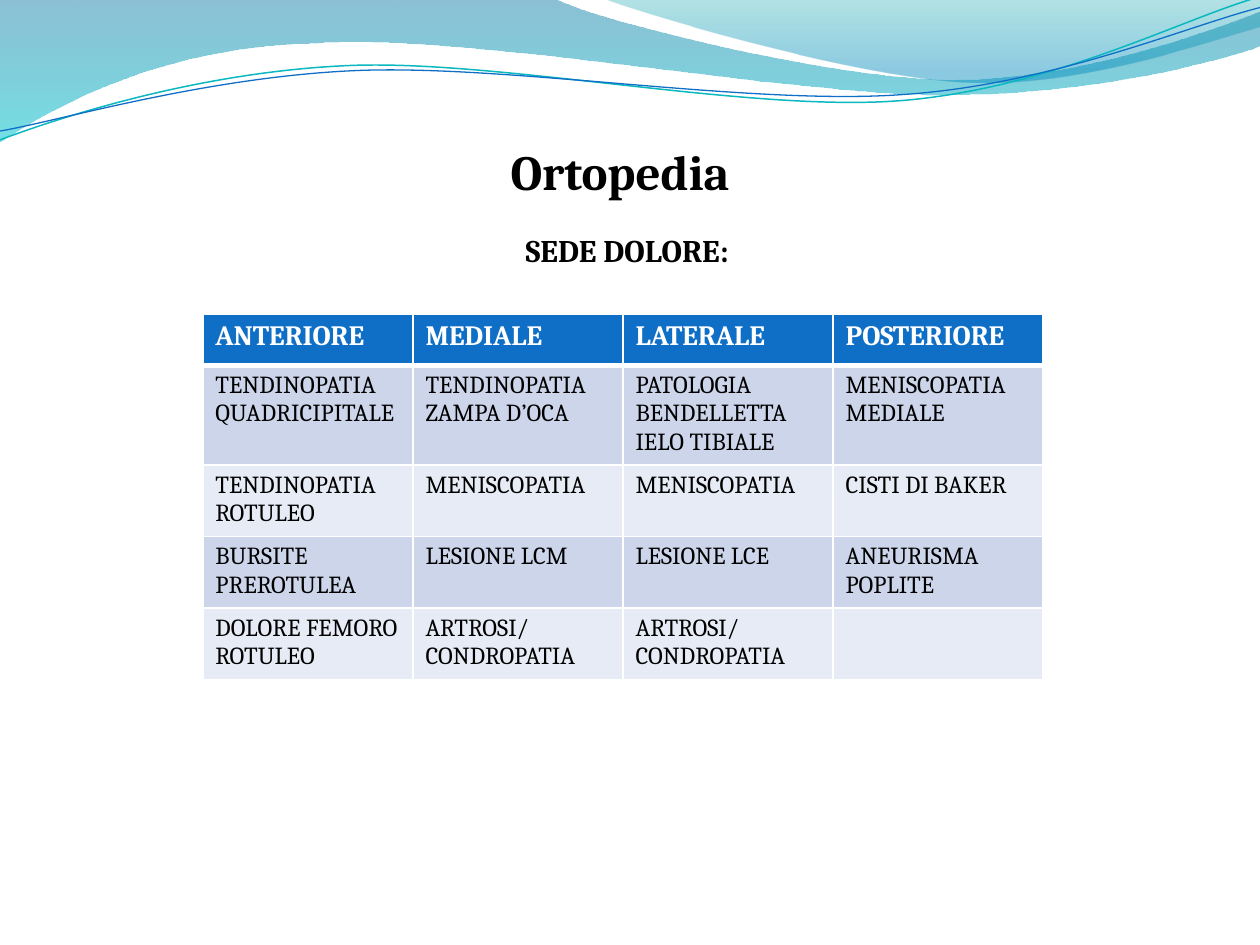
from math import cos, radians, sin

from lxml import etree
from pptx import Presentation
from pptx.dml.color import RGBColor
from pptx.enum.text import MSO_ANCHOR, MSO_AUTO_SIZE, PP_ALIGN
from pptx.oxml.ns import qn
from pptx.util import Inches, Pt

CENTER = PP_ALIGN.CENTER
TOP = MSO_ANCHOR.TOP
NO_AUTOFIT = MSO_AUTO_SIZE.NONE

COLORS = {
    "text": "000000", "white": "FFFFFF", "header": "0F6FC6",
    "odd": "CCD5EA", "even": "E7EBF5", "teal": "0AB8BF",
    "wave_top": "0074A1", "wave_bottom": "00C6CF",
    "crest_top": "00A1A9", "crest_bottom": "008BBF",
}
LINE_TILT = -2.7
LINE_PIVOT = (4.99, 0.58)

# Outlines in inches: a pair is a corner, a six-tuple is a Bézier curve
WAVE = [(0, 0), (4.4, -0.01), (4.76, 0.17, 6.64, 0.63, 7.58, 0.63),
        (8.53, 0.63, 9.58, 0.26, 10, 0.09), (10.01, 0.36),
        (9.83, 0.44, 8.7, 0.76, 7.46, 0.75), (6.22, 0.75, 3.82, 0.28, 2.57, 0.34),
        (1.29, 0.36, 0.46, 0.83, -0.01, 1.13), (0, 0)]
CREST = [(4.79, -0.01), (5.09, 0.11, 6.82, 0.62, 7.69, 0.65),
         (8.56, 0.69, 9.61, 0.32, 10, 0.21), (10, 0), (4.79, -0.01)]
TEAL_LINE = [(0, 1.11), (0.48, 0.93, 1.58, 0.57, 2.77, 0.52),
             (3.95, 0.47, 5.93, 0.89, 7.13, 0.8), (8.33, 0.71, 9.38, 0.15, 9.98, -0.02)]
BLUE_LINE = [(0, 1.04), (0.47, 0.96, 1.64, 0.61, 2.83, 0.56),
             (4.03, 0.51, 5.97, 0.84, 7.17, 0.75), (8.36, 0.67, 9.41, 0.21, 10, 0.06)]

PAIN_SITES = [
    ["ANTERIORE", "MEDIALE", "LATERALE", "POSTERIORE"],
    ["TENDINOPATIA QUADRICIPITALE", "TENDINOPATIA ZAMPA D’OCA",
     "PATOLOGIA BENDELLETTA IELO TIBIALE", "MENISCOPATIA MEDIALE"],
    ["TENDINOPATIA ROTULEO", "MENISCOPATIA", "MENISCOPATIA", "CISTI DI BAKER"],
    ["BURSITE PREROTULEA", "LESIONE LCM", "LESIONE LCE", "ANEURISMA POPLITE"],
    ["DOLORE FEMORO ROTULEO", "ARTROSI/CONDROPATIA", "ARTROSI/CONDROPATIA", ""],
]


def color(name):
    return RGBColor.from_string(COLORS[name])


def turn(outline, degrees):
    """Rotate an outline clockwise about the pivot of the thin lines."""
    c, s = cos(radians(degrees)), sin(radians(degrees))
    px, py = LINE_PIVOT
    turned = []
    for segment in outline:
        values = []
        for x, y in zip(segment[::2], segment[1::2]):
            values += [px + (x - px) * c - (y - py) * s, py + (x - px) * s + (y - py) * c]
        turned.append(tuple(values))
    return turned


class SlideBuilder:
    font = "Cambria"

    def __init__(self, slide):
        self.slide = slide

    def add_run(self, paragraph, text, size, color_name, bold):
        run = paragraph.add_run()
        run.text = text
        run.font.name = self.font
        run.font.size = Pt(size)
        run.font.bold = bold
        run.font.color.rgb = color(color_name)

    def freeform(self, outline, close):
        points = [(Inches(x), Inches(y)) for segment in outline
                  for x, y in zip(segment[::2], segment[1::2])]
        builder = self.slide.shapes.build_freeform(*points[0])
        builder.add_line_segments(points[1:], close=close)
        shape = builder.convert_to_shape()
        shape.shadow.inherit = False
        # Merge the three steps of each curve into one Bézier segment
        steps = iter(list(shape._element.spPr.iter(qn("a:lnTo"))))
        for segment in outline[1:]:
            first = next(steps)
            if len(segment) == 6:
                first.tag = qn("a:cubicBezTo")
                for _ in range(2):
                    step = next(steps)
                    first.append(step[0])
                    step.getparent().remove(step)
        return shape

    def gradient_wave(self, outline, stops):
        shape = self.freeform(outline, True)
        shape.line.fill.background()
        shape.fill.gradient()
        shape.fill.gradient_angle = 270
        for stop, (position, color_name, _) in zip(shape.fill.gradient_stops, stops):
            stop.position = position
            stop.color.rgb = color(color_name)
        for element, (_, _, opacity) in zip(shape._element.spPr.iter(qn("a:srgbClr")), stops):
            etree.SubElement(element, qn("a:alpha"), val=str(opacity * 1000))

    def thin_line(self, outline, color_name, width):
        shape = self.freeform(turn(outline, -LINE_TILT), False)
        shape.rotation = LINE_TILT
        shape.fill.background()
        shape.line.color.rgb = color(color_name)
        shape.line.width = Pt(width)

    def placeholder_text(self, shape, text, box, size):
        self.slide.shapes._spTree.append(shape._element)  # in front of the waves
        shape.left, shape.top, shape.width, shape.height = map(Inches, box)
        frame = shape.text_frame
        frame.word_wrap = True
        frame.auto_size = NO_AUTOFIT
        frame.vertical_anchor = TOP
        paragraph = frame.paragraphs[0]
        paragraph.alignment = CENTER
        paragraph.space_before = Pt(0)
        properties = paragraph._p.get_or_add_pPr()
        properties.set("marL", "0")
        properties.set("indent", "0")
        etree.SubElement(properties, qn("a:buNone"))
        self.add_run(paragraph, text, size, "text", True)

    def cell_borders(self, cell, bottom_width):
        properties = cell._tc.get_or_add_tcPr()
        widths = {"L": 1, "R": 1, "T": 1, "B": bottom_width}
        for index, (side, width) in enumerate(widths.items()):
            line = etree.Element(qn(f"a:ln{side}"), w=str(Pt(width)))
            fill = etree.SubElement(line, qn("a:solidFill"))
            etree.SubElement(fill, qn("a:srgbClr"), val=COLORS["white"])
            properties.insert(index, line)

    def table(self, rows, box, row_height):
        left, top, width, height = map(Inches, box)
        frame = self.slide.shapes.add_table(len(rows), len(rows[0]), left, top, width, height)
        table = frame.table
        for r, texts in enumerate(rows):
            table.rows[r].height = Inches(row_height)
            header = r == 0
            fill_name = "header" if header else ("odd" if r % 2 else "even")
            for c, text in enumerate(texts):
                cell = table.cell(r, c)
                cell.fill.solid()
                cell.fill.fore_color.rgb = color(fill_name)
                self.cell_borders(cell, 3 if header else 1)
                if not header:
                    cell.margin_bottom = Inches(0.07)
                if text:
                    self.add_run(cell.text_frame.paragraphs[0], text, 16 if header else 14,
                                 "white" if header else "text", header)
        frame.height = height


def main():
    presentation = Presentation()
    presentation.slide_width, presentation.slide_height = Inches(10), Inches(7.5)
    slide = presentation.slides.add_slide(presentation.slide_layouts[1])
    builder = SlideBuilder(slide)

    # Wave decoration
    builder.gradient_wave(WAVE, [(0, "wave_top", 45), (1, "wave_bottom", 55)])
    builder.gradient_wave(CREST, [(0, "crest_top", 30), (0.8, "crest_bottom", 45)])
    builder.thin_line(TEAL_LINE, "teal", 0.85)
    builder.thin_line(BLUE_LINE, "header", 0.75)

    # Title and subtitle
    builder.placeholder_text(slide.shapes.title, "Ortopedia", (0.67, 1.07, 8.5, 0.57), 28)
    builder.placeholder_text(slide.placeholders[1], "SEDE DOLORE: ",
                             (0.83, 1.78, 8.35, 1.31), 18)

    # Pain sites
    builder.table(PAIN_SITES, (1.61, 2.49, 6.67, 3.14), 0.41)
    presentation.save("out.pptx")


if __name__ == "__main__":
    main()
